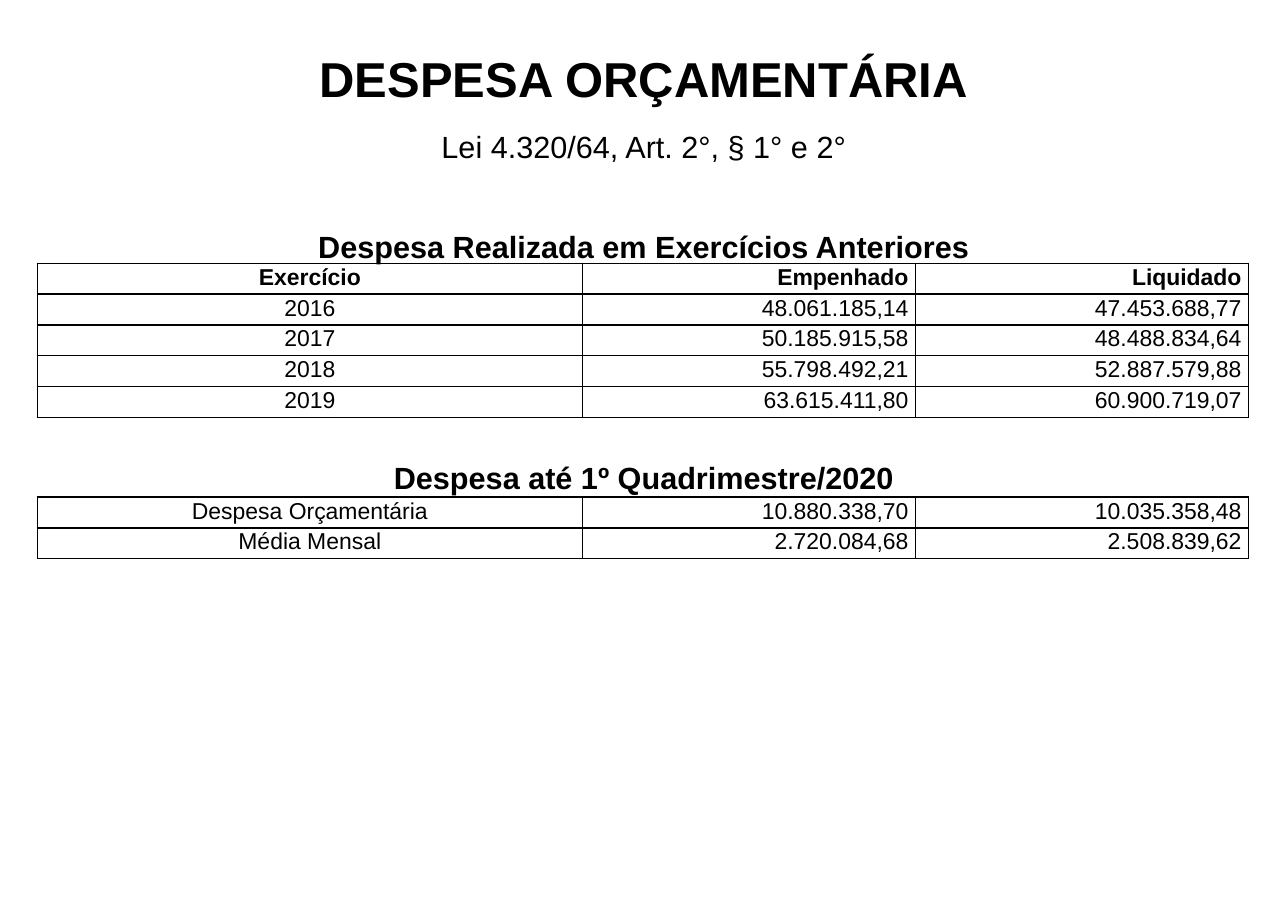
import pptx
import pptx.dml.color
import pptx.enum.text
import pptx.oxml
import pptx.oxml.ns
import pptx.util
from dataclasses import dataclass

Cm = pptx.util.Cm
Pt = pptx.util.Pt
CENTER = pptx.enum.text.PP_ALIGN.CENTER
RIGHT = pptx.enum.text.PP_ALIGN.RIGHT


@dataclass(frozen=True)
class Theme:
    font: str = "Arial"
    ink: str = "000000"
    title_size: int = 32
    heading_size: int = 20
    table_size: int = 15
    border_width: int = 1


THEME = Theme()
TITLE = "DESPESA ORÇAMENTÁRIA"
LAW = "Lei 4.320/64, Art. 2°, § 1° e 2°"
PREVIOUS_HEADING = "Despesa Realizada em Exercícios Anteriores"
PREVIOUS_YEARS = [
    ("Exercício", "Empenhado", "Liquidado"),
    ("2016", "48.061.185,14", "47.453.688,77"),
    ("2017", "50.185.915,58", "48.488.834,64"),
    ("2018", "55.798.492,21", "52.887.579,88"),
    ("2019", "63.615.411,80", "60.900.719,07"),
]
CURRENT_HEADING = "Despesa até 1º Quadrimestre/2020"
CURRENT_YEAR = [
    ("Despesa Orçamentária", "10.880.338,70", "10.035.358,48"),
    ("Média Mensal", "2.720.084,68", "2.508.839,62"),
]

PAGE = (29.7, 21)
HEADING_BOXES = [
    (1.09, 1.42, [(TITLE, THEME.title_size, True, 1)]),
    (2.92, 3.15, [
        (LAW, THEME.heading_size, False, 1),
        (PREVIOUS_HEADING, THEME.heading_size, True, 41.5),
    ]),
    (10.54, 0.91, [(CURRENT_HEADING, THEME.heading_size, True, 1.1)]),
]
TABLES = [(6.07, PREVIOUS_YEARS, True), (11.46, CURRENT_YEAR, False)]
TABLE_LEFT = 0.86
COLUMN_WIDTHS = (12.57, 7.68, 7.68)
ROW_HEIGHT = 0.71
NUMBER_PADDING = 0.16
HEADING_WIDTH = 15.1


def style(paragraph, size, bold, align, space_before):
    paragraph.alignment = align
    paragraph.space_before = Pt(space_before)
    paragraph.font.name = THEME.font
    paragraph.font.size = Pt(size)
    paragraph.font.bold = bold
    paragraph.font.color.rgb = pptx.dml.color.RGBColor.from_string(THEME.ink)


def add_headings(slide, top, height, lines):
    left = (PAGE[0] - HEADING_WIDTH) / 2
    box = slide.shapes.add_textbox(Cm(left), Cm(top), Cm(HEADING_WIDTH), Cm(height))
    frame = box.text_frame
    frame.word_wrap = True
    frame.margin_left = frame.margin_right = frame.margin_bottom = 0
    frame.margin_top = Cm(0.03)
    for index, (text, size, bold, space_before) in enumerate(lines):
        paragraph = frame.add_paragraph() if index else frame.paragraphs[0]
        paragraph.text = text
        style(paragraph, size, bold, CENTER, space_before)


def add_borders(cell):
    properties = cell._tc.get_or_add_tcPr()
    for index, side in enumerate(("lnL", "lnR", "lnT", "lnB")):
        border = pptx.oxml.parse_xml(
            f'<a:{side} {pptx.oxml.ns.nsdecls("a")} w="{Pt(THEME.border_width)}">'
            f'<a:solidFill><a:srgbClr val="{THEME.ink}"/></a:solidFill></a:{side}>'
        )
        properties.insert(index, border)


def add_expenses(slide, top, rows, has_header):
    table = slide.shapes.add_table(
        len(rows), len(COLUMN_WIDTHS), Cm(TABLE_LEFT), Cm(top),
        Cm(sum(COLUMN_WIDTHS)), Cm(ROW_HEIGHT * len(rows)),
    ).table
    table.first_row = has_header
    table.horz_banding = False
    for column, width in zip(table.columns, COLUMN_WIDTHS):
        column.width = Cm(width)
    for r, values in enumerate(rows):
        table.rows[r].height = Cm(ROW_HEIGHT)
        for c, value in enumerate(values):
            cell = table.cell(r, c)
            cell.text = value
            cell.margin_left = cell.margin_bottom = 0
            cell.margin_top = Cm(0.03)
            cell.margin_right = Cm(NUMBER_PADDING if c else 0)
            cell.fill.background()
            style(cell.text_frame.paragraphs[0], THEME.table_size,
                  has_header and r == 0, RIGHT if c else CENTER, 0.6)
            add_borders(cell)


def main():
    presentation = pptx.Presentation()
    presentation.slide_width, presentation.slide_height = map(Cm, PAGE)
    slide = presentation.slides.add_slide(presentation.slide_layouts[6])
    for box in HEADING_BOXES:
        add_headings(slide, *box)
    for expenses in TABLES:
        add_expenses(slide, *expenses)
    presentation.save("out.pptx")


if __name__ == "__main__":
    main()
